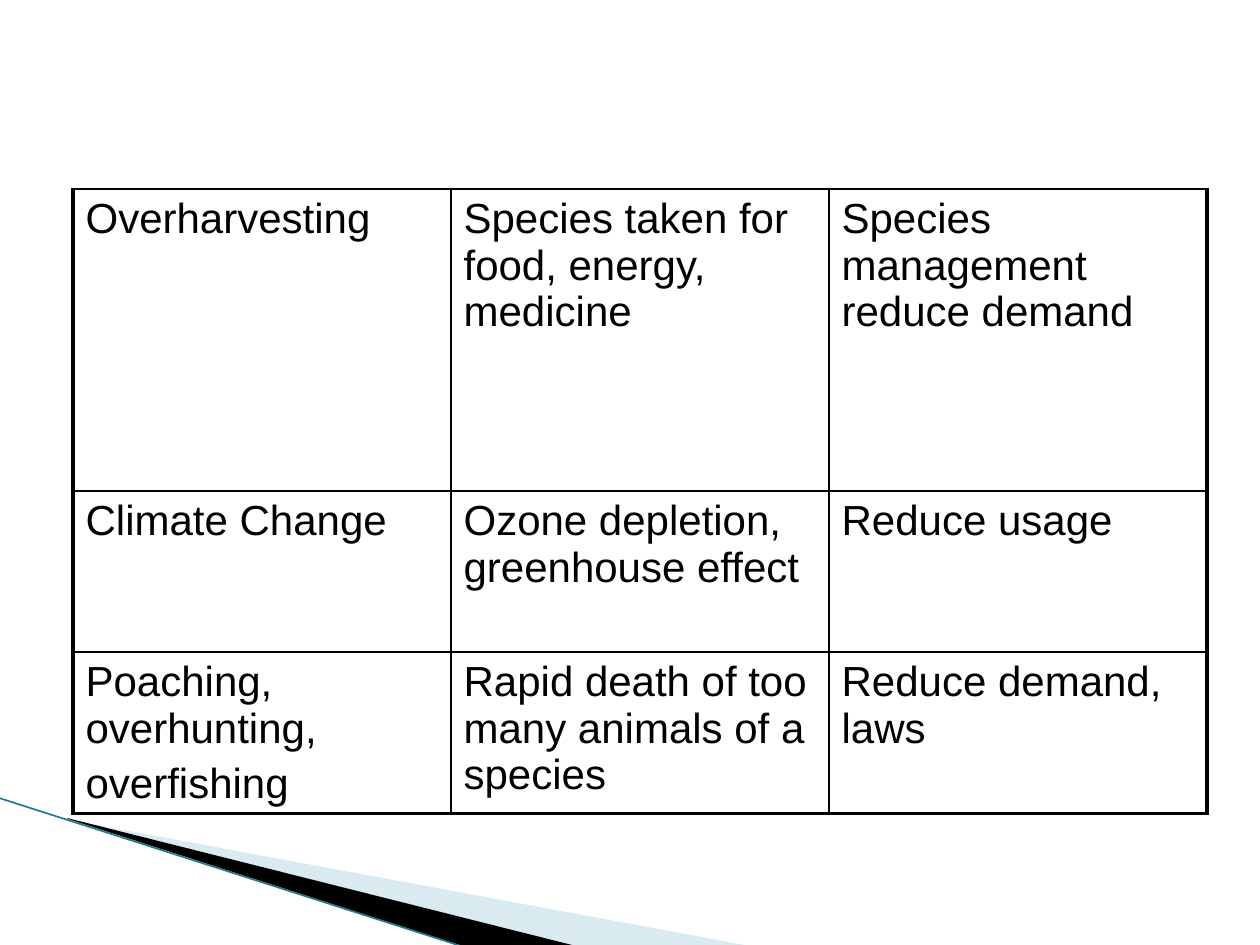
"""Builds a slide with a table of threats to species above a wave of wedges."""
from lxml import etree
from pptx import Presentation
from pptx import util as u
from pptx.dml.color import RGBColor
from pptx.enum import shapes
from pptx.oxml.ns import qn

EMU_PER_PX = 914400 / 126
THREATS = [
    ["Overharvesting", "Species taken for food, energy, medicine",
     "Species management reduce demand"],
    ["Climate Change", "Ozone depletion, greenhouse effect", "Reduce usage"],
    ["Poaching, overhunting,\noverfishing",
     "Rapid death of too many animals of a species", "Reduce demand, laws"],
]
ROW_HEIGHTS = [302, 161, 161]


def px(length):
    """Turn pixels into EMU."""
    return u.Emu(round(length * EMU_PER_PX))


def color(value):
    """Turn a hex string into a colour."""
    return RGBColor.from_string(value)


def write(frame, content, font="Arial", size=24, ink="000000", gap=4.8):
    """Write one paragraph per line of content, with a gap between them."""
    frame.word_wrap = True
    frame.text = content
    for index, paragraph in enumerate(frame.paragraphs):
        paragraph.space_before = u.Pt(gap if index else 0)
        for run in paragraph.runs:
            run.font.name = font
            run.font.size = u.Pt(size)
            run.font.color.rgb = color(ink)


class Sheet:
    """Hold the style and the current slide."""

    ink = "000000"
    thin, thick = 1, 2.25

    def __init__(self, deck):
        """Add a blank slide to the deck."""
        self.slide = deck.slides.add_slide(deck.slide_layouts[6])

    def wedge(self, points, fill, opacity=100):
        """Draw a filled polygon without an outline."""
        builder = self.slide.shapes.build_freeform(*points[0], scale=EMU_PER_PX)
        builder.add_line_segments(points[1:], close=True)
        shape = builder.convert_to_shape()
        shape.shadow.inherit = False
        shape.line.fill.background()
        shape.fill.solid()
        shape.fill.fore_color.rgb = color(fill)
        if opacity < 100:
            tint = shape.fill._xPr.find(".//" + qn("a:srgbClr"))
            etree.SubElement(tint, qn("a:alpha"), val=str(opacity * 1000))

    def line(self, start, end, ink, width):
        """Draw a straight line."""
        edge = self.slide.shapes.add_connector(
            shapes.MSO_CONNECTOR.STRAIGHT, *map(px, start + end))
        edge.line.color.rgb = color(ink)
        edge.line.width = u.Pt(width)
        etree.SubElement(edge._element.spPr, qn("a:effectLst"))

    def borders(self, cell, widths):
        """Set the left, right, top and bottom borders of a cell."""
        properties = cell._tc.get_or_add_tcPr()
        for index, (side, width) in enumerate(zip("LRTB", widths)):
            border = etree.Element(qn(f"a:ln{side}"), w=str(u.Pt(width)))
            fill = etree.SubElement(border, qn("a:solidFill"))
            etree.SubElement(fill, qn("a:srgbClr"), val=self.ink)
            properties.insert(index, border)

    def table(self, left, top, column_width, row_heights, rows):
        """Draw a plain grid with a heavier outline on the left, right and bottom."""
        last_row, last_column = len(rows) - 1, len(rows[0]) - 1
        grid = self.slide.shapes.add_table(
            len(rows), len(rows[0]), px(left), px(top),
            px(column_width * len(rows[0])), px(sum(row_heights))).table
        grid.first_row = grid.horz_banding = False
        for column in grid.columns:
            column.width = px(column_width)
        for r, (height, row) in enumerate(zip(row_heights, rows)):
            grid.rows[r].height = px(height)
            for c, content in enumerate(row):
                cell = grid.cell(r, c)
                write(cell.text_frame, content, ink=self.ink)
                cell.fill.background()
                heavy = (c == 0, c == last_column, False, r == last_row)
                self.borders(cell, [self.thick if h else self.thin for h in heavy])


def main():
    """Build and save the slide."""
    deck = Presentation()
    deck.slide_width, deck.slide_height = px(1260), px(945)
    sheet = Sheet(deck)
    sheet.wedge([(69, 820), (750, 946), (575, 946), (69, 819)], "A0CBDC", opacity=40)
    sheet.wedge([(67, 818), (576, 946), (469, 948), (68, 819)], "000000")
    sheet.line((-1, 798), (467, 948), "1F7A8C", 0.95)
    sheet.table(73, 189, 378, ROW_HEIGHTS, THREATS)
    deck.save("out.pptx")


if __name__ == "__main__":
    main()
